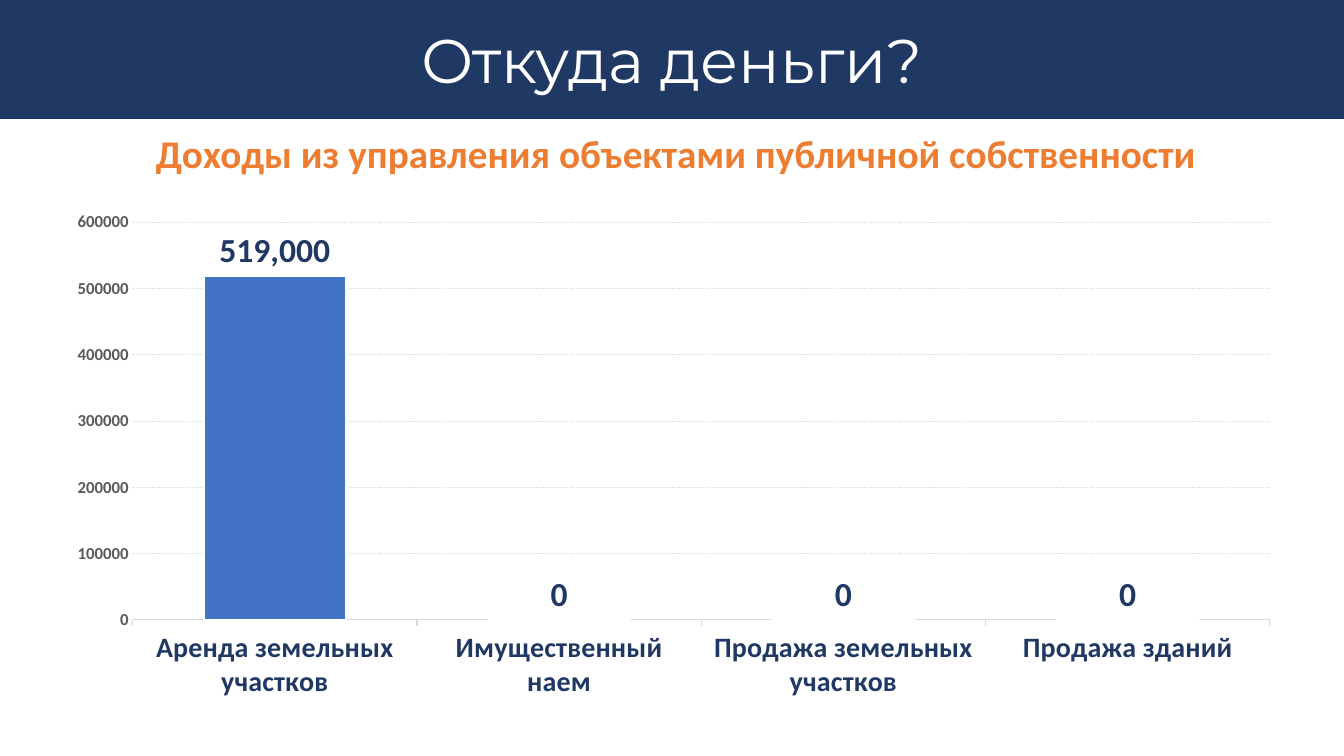
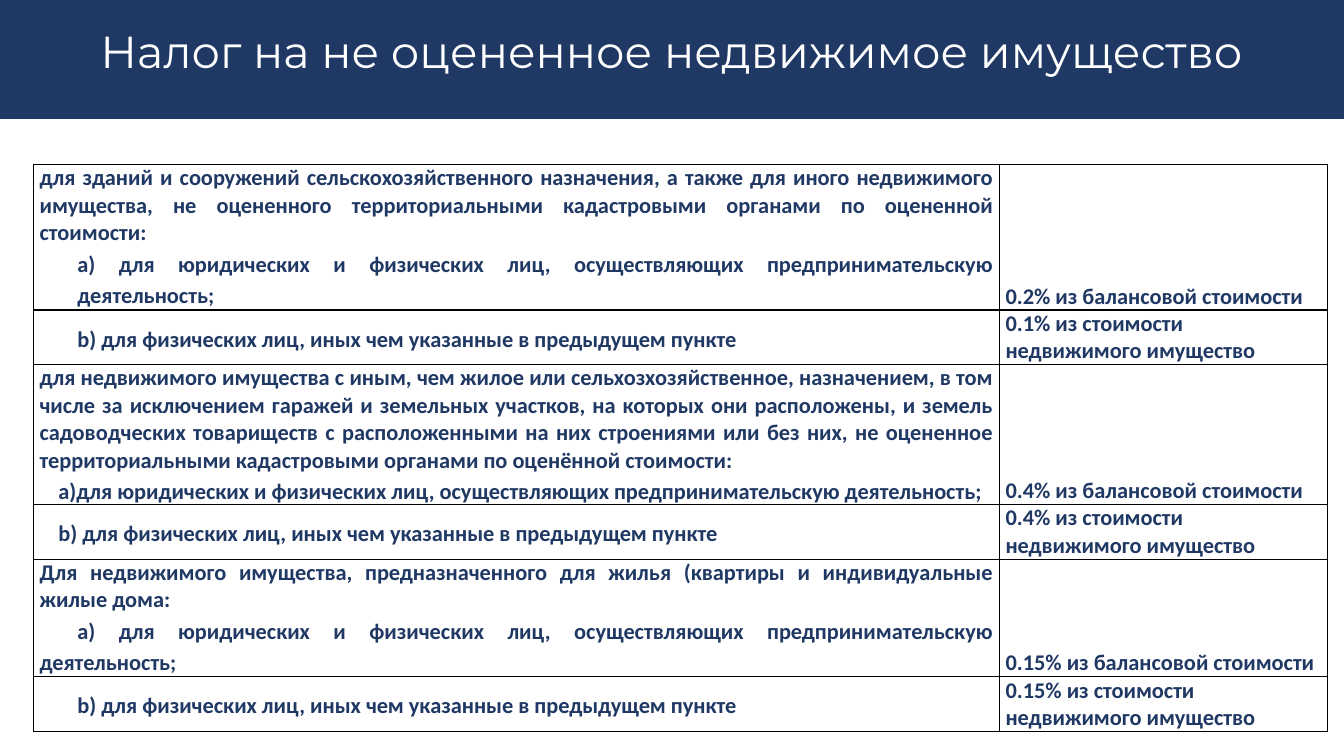
from lxml import etree
from pptx import Presentation
from pptx.chart.data import CategoryChartData
from pptx.dml.color import RGBColor
from pptx.enum.chart import XL_CHART_TYPE, XL_LABEL_POSITION, XL_TICK_MARK
from pptx.enum.dml import MSO_LINE
from pptx.enum.shapes import MSO_SHAPE
from pptx.enum.text import MSO_ANCHOR, PP_ALIGN
from pptx.oxml import parse_xml
from pptx.oxml.ns import nsdecls, qn
from pptx.util import Pt

NAVY = RGBColor(0x20, 0x38, 0x64)
BLUE = RGBColor(0x44, 0x72, 0xC4)
PALE = RGBColor(0xB4, 0xC7, 0xE7)
ORANGE = RGBColor(0xED, 0x7D, 0x31)
WHITE = RGBColor(0xFF, 0xFF, 0xFF)
GREY = RGBColor(0x59, 0x59, 0x59)
RULE = RGBColor(0xD9, 0xD9, 0xD9)

RECT = MSO_SHAPE.RECTANGLE
COLUMN = XL_CHART_TYPE.COLUMN_CLUSTERED
ABOVE = XL_LABEL_POSITION.OUTSIDE_END
TICK_OUT, TICK_NONE = XL_TICK_MARK.OUTSIDE, XL_TICK_MARK.NONE
DOTS = MSO_LINE.ROUND_DOT
LEFT, CENTER, JUSTIFY = PP_ALIGN.LEFT, PP_ALIGN.CENTER, PP_ALIGN.JUSTIFY
TOP, MIDDLE, BOTTOM = MSO_ANCHOR.TOP, MSO_ANCHOR.MIDDLE, MSO_ANCHOR.BOTTOM

WIDTH, HEIGHT = 960, 540
HEAD, BODY = "Montserrat", "Calibri"

SALES = {
    "Аренда земельных участков": 519000,
    "Имущественный наем": 0,
    "Продажа земельных участков": 0,
    "Продажа зданий": 0,
}

FIRMS = "для юридических и физических лиц, осуществляющих предпринимательскую деятельность;"
PEOPLE = "b) для физических лиц, иных чем указанные в предыдущем пункте"
BOOK = "из балансовой стоимости"
VALUE = "из стоимости недвижимого имущество"

TAXES = [
    ("для зданий и сооружений сельскохозяйственного назначения, а также для иного "
     "недвижимого имущества, не оцененного территориальными кадастровыми органами "
     "по оцененной стоимости:",
     " " + FIRMS, True, 27, 0, "0.2%", "0.1%", 104),
    ("для недвижимого имущества с иным, чем жилое или сельхозхозяйственное, назначением, "
     "в том числе за исключением гаражей и земельных участков, на которых они расположены, "
     "и земель садоводческих товариществ с расположенными на них строениями или без них, "
     "не оцененное территориальными кадастровыми органами по оценённой стоимости:",
     FIRMS, True, 13.5, 0, "0.4%", "0.4%", 100),
    ("Для недвижимого имущества, предназначенного для жилья (квартиры и индивидуальные "
     "жилые дома:",
     "a) " + FIRMS, False, 0, 27, "0.15%", "0.15%", 84),
]


class Deck:
    def __init__(self):
        self.prs = Presentation()
        self.prs.slide_width, self.prs.slide_height = Pt(WIDTH), Pt(HEIGHT)
        self.slide = None

    def style(self, font, size, color, bold=True, face=BODY):
        font.name, font.size, font.bold = face, Pt(size), bold
        font.color.rgb = color

    def text(self, words, box, size, color, bold=True, face=BODY, gap=1.0):
        frame = self.slide.shapes.add_textbox(*map(Pt, box)).text_frame
        frame.word_wrap = True
        para = frame.paragraphs[0]
        para.text, para.alignment, para.line_spacing = words, CENTER, gap
        self.style(para.font, size, color, bold, face)

    def page(self, title, size):
        self.slide = self.prs.slides.add_slide(self.prs.slide_layouts[6])
        band = self.slide.shapes.add_shape(RECT, 0, 0, Pt(WIDTH), Pt(85))
        band.shadow.inherit = False
        band.fill.solid()
        band.fill.fore_color.rgb = NAVY
        band.line.fill.background()
        self.text(title, (12, 18, 936, 58), size, WHITE, False, HEAD, 0.9)

    def chart(self, sales, box, fills):
        data = CategoryChartData()
        data.categories = list(sales)
        data.add_series("Series 1", list(sales.values()))
        chart = self.slide.shapes.add_chart(COLUMN, *map(Pt, box), data).chart
        chart.has_legend = chart.has_title = False
        chart.font.name, chart.font.size = BODY, Pt(10)
        plot = chart.plots[0]
        plot.gap_width, plot.vary_by_categories = 100, False
        bars = plot.series[0]
        for part in [bars] + [bars.points[i] for i in range(len(fills))]:
            part.format.line.color.rgb = WHITE
            part.format.line.width = Pt(1.5)
        bars.format.fill.solid()
        bars.format.fill.fore_color.rgb = BLUE
        for i, color in enumerate(fills):
            fill = bars.points[i].format.fill
            fill.solid()
            fill.fore_color.rgb = color
        plot.has_data_labels = True
        tags = plot.data_labels
        tags.show_value, tags.position = True, ABOVE
        tags.number_format, tags.number_format_is_linked = "#,##0", False
        self.style(tags.font, 24, NAVY)
        self.axes(chart)
        self.inner(chart, x=0.085, y=0.072, w=0.882, h=0.726)

    def axes(self, chart):
        names, scale = chart.category_axis, chart.value_axis
        self.style(names.tick_labels.font, 20, NAVY)
        self.style(scale.tick_labels.font, 12, GREY)
        names.major_tick_mark, scale.major_tick_mark = TICK_OUT, TICK_NONE
        scale.has_major_gridlines = True
        grid = scale.major_gridlines.format.line
        for line in (names.format.line, grid):
            line.color.rgb, line.width = RULE, Pt(0.75)
        grid.dash_style = DOTS
        scale.format.line.fill.background()
        scale.tick_labels.number_format = "0"
        scale.tick_labels.number_format_is_linked = False

    def inner(self, chart, **sides):
        area = chart._chartSpace.find(".//" + qn("c:plotArea"))
        for old in area.findall(qn("c:layout")):
            area.remove(old)
        layout = etree.Element(qn("c:layout"))
        manual = etree.SubElement(layout, qn("c:manualLayout"))
        marks = {"layoutTarget": "inner", "xMode": "edge", "yMode": "edge", **sides}
        for key, val in marks.items():
            etree.SubElement(manual, qn("c:" + key)).set("val", str(val))
        area.insert(0, layout)

    def table(self, rows, heights, spot, widths):
        total = sum(widths), sum(heights)
        table = self.slide.shapes.add_table(
            len(rows), len(widths), *map(Pt, spot + total)).table
        table.first_row = table.horz_banding = False
        for col, width in zip(table.columns, widths):
            col.width = Pt(width)
        for r, (row, height) in enumerate(zip(rows, heights)):
            table.rows[r].height = Pt(height)
            for c, (anchor, paras) in enumerate(row):
                self.cell(table.cell(r, c), anchor, paras)

    def cell(self, cell, anchor, paras):
        cell.margin_left = cell.margin_right = Pt(4.3)
        cell.margin_top = cell.margin_bottom = 0
        cell.vertical_anchor = anchor
        cell.fill.background()
        props = cell._tc.get_or_add_tcPr()
        for i, side in enumerate("LRTB"):
            props.insert(i, parse_xml(
                f'<a:ln{side} {nsdecls("a")} w="12700"><a:solidFill>'
                f'<a:srgbClr val="000000"/></a:solidFill></a:ln{side}>'))
        frame = cell.text_frame
        for i, (words, align, gap, margin, first, auto) in enumerate(paras):
            para = frame.add_paragraph() if i else frame.paragraphs[0]
            pr = para._p.get_or_add_pPr()
            pr.set("marL", str(Pt(margin)))
            pr.set("indent", str(Pt(first)))
            if auto:
                etree.SubElement(pr, qn("a:buFont")).set("typeface", "+mj-lt")
                etree.SubElement(pr, qn("a:buAutoNum")).set("type", "alphaLcParenR")
            para.text, para.alignment, para.line_spacing = words, align, gap
            self.style(para.font, 16, NAVY)


def rates(words):
    return [(words, LEFT, 1.0, 0, 0, False)]


def main():
    deck = Deck()
    deck.page("Откуда деньги?", 44)
    deck.text("Доходы из управления объектами публичной собственности",
              (16.5, 88.5, 932, 41), 28, ORANGE)
    deck.chart(SALES, (16.5, 130.5, 921, 391.5), [BLUE, NAVY, PALE, BLUE])

    deck.page("Налог на не оцененное недвижимое имущество", 32)
    rows, heights = [], []
    for intro, firms, auto, margin, first, book, value, height in TAXES:
        rows.append([
            (TOP, [(intro, JUSTIFY, 1.0, 0, 0, False),
                   (firms, JUSTIFY, 1.15, margin, first, auto)]),
            (BOTTOM, rates(f"{book} {BOOK}"))])
        rows.append([
            (MIDDLE, [(PEOPLE, JUSTIFY, 1.15, margin, first, False)]),
            (TOP, rates(f"{value} {VALUE}"))])
        heights += [height, 39]
    deck.table(rows, heights, (24, 117.5), (690, 234))
    deck.prs.save("out.pptx")


if __name__ == "__main__":
    main()
